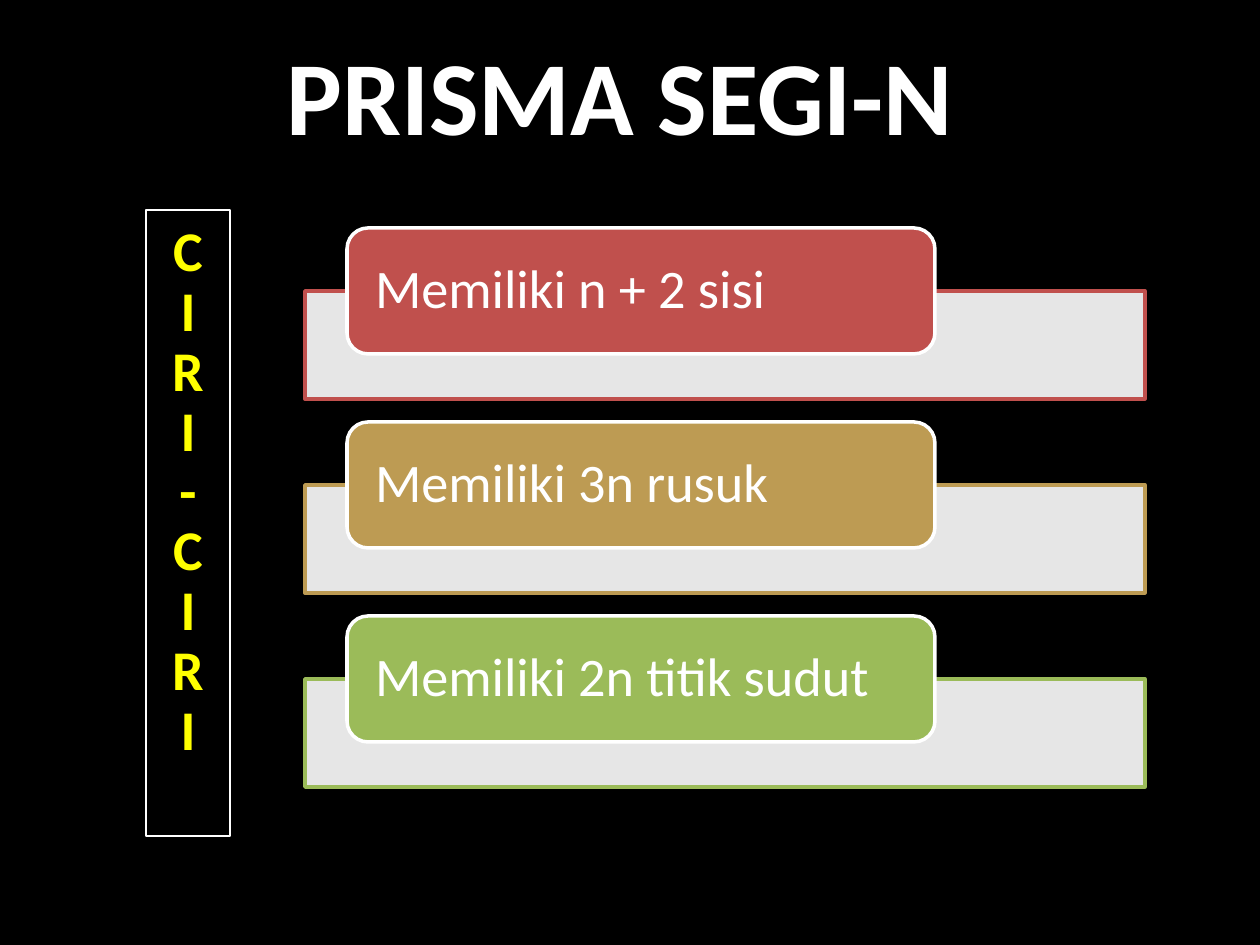
from dataclasses import dataclass

from lxml.etree import SubElement
from pptx import Presentation
from pptx.dml.color import RGBColor
from pptx.enum.shapes import MSO_SHAPE
from pptx.enum.text import MSO_ANCHOR, PP_ALIGN
from pptx.oxml.ns import qn
from pptx.util import Pt

PX = 914400 // 126


@dataclass(frozen=True)
class Theme:
    font: str = "Calibri"
    background: RGBColor = RGBColor(0, 0, 0)
    white: RGBColor = RGBColor(255, 255, 255)
    yellow: RGBColor = RGBColor(255, 255, 0)
    red: RGBColor = RGBColor(0xC0, 0x50, 0x4D)
    gold: RGBColor = RGBColor(0xBD, 0x9B, 0x53)
    green: RGBColor = RGBColor(0x9B, 0xBB, 0x59)
    title_size: int = 60
    label_size: int = 32
    item_size: int = 31


theme = Theme()


def add_box(kind, left, top, width, height, fill, line, line_width):
    shape = slide.shapes.add_shape(kind, left * PX, top * PX, width * PX, height * PX)
    shape.shadow.inherit = False
    if fill is None:
        shape.fill.background()
    else:
        shape.fill.solid()
        shape.fill.fore_color.rgb = fill
    shape.line.color.rgb = line
    shape.line.width = Pt(line_width)
    return shape


def write(shape, lines, size, color, bold, align, anchor, spacing, margins):
    """Fill a shape with one paragraph per line; margins are left, top, right, bottom in px."""
    frame = shape.text_frame
    frame.text = "\n".join(lines)
    frame.word_wrap = True
    frame.vertical_anchor = anchor
    for side, margin in zip(("left", "top", "right", "bottom"), margins):
        setattr(frame, f"margin_{side}", margin * PX)
    for paragraph in frame.paragraphs:
        paragraph.alignment = align
        paragraph.line_spacing = spacing
        font_format = {"name": theme.font, "size": Pt(size), "bold": bold}
        for name, value in font_format.items():
            setattr(paragraph.runs[0].font, name, value)
        paragraph.runs[0].font.color.rgb = color


presentation = Presentation()
presentation.slide_width = 1260 * PX
presentation.slide_height = 945 * PX
slide = presentation.slides.add_slide(presentation.slide_layouts[5])
slide.background.fill.solid()
slide.background.fill.fore_color.rgb = theme.background

title = slide.shapes.title
for name, value in {"left": 53, "top": 15, "width": 1134, "height": 158}.items():
    setattr(title, name, value * PX)
write(title, ["PRISMA SEGI-N"], theme.title_size, theme.white, True,
      PP_ALIGN.CENTER, MSO_ANCHOR.MIDDLE, 1.0, (13, 6, 13, 6))

label = add_box(MSO_SHAPE.RECTANGLE, 146, 210, 84, 626, None, theme.white, 0.75)
write(label, "CIRI-CIRI", theme.label_size, theme.yellow, True,
      PP_ALIGN.CENTER, MSO_ANCHOR.TOP, 0.89, (6, 14, 6, 6))

features = [
    ("Memiliki n + 2 sisi", theme.red),
    ("Memiliki 3n rusuk", theme.gold),
    ("Memiliki 2n titik sudut", theme.green),
]
for row, (text, color) in enumerate(features):
    top = 228 + row * 194
    panel = add_box(MSO_SHAPE.RECTANGLE, 305, top + 63, 840, 108, theme.white, color, 2)
    panel_color = panel.fill._xPr.find(qn("a:solidFill"))[0]
    SubElement(panel_color, qn("a:alpha"), val="90000")
    heading = add_box(MSO_SHAPE.ROUNDED_RECTANGLE, 347, top, 588, 126, color, theme.white, 2)
    write(heading, [text], theme.item_size, theme.white, False,
          PP_ALIGN.LEFT, MSO_ANCHOR.MIDDLE, 0.9, (22, 0, 22, 0))

presentation.save("out.pptx")
